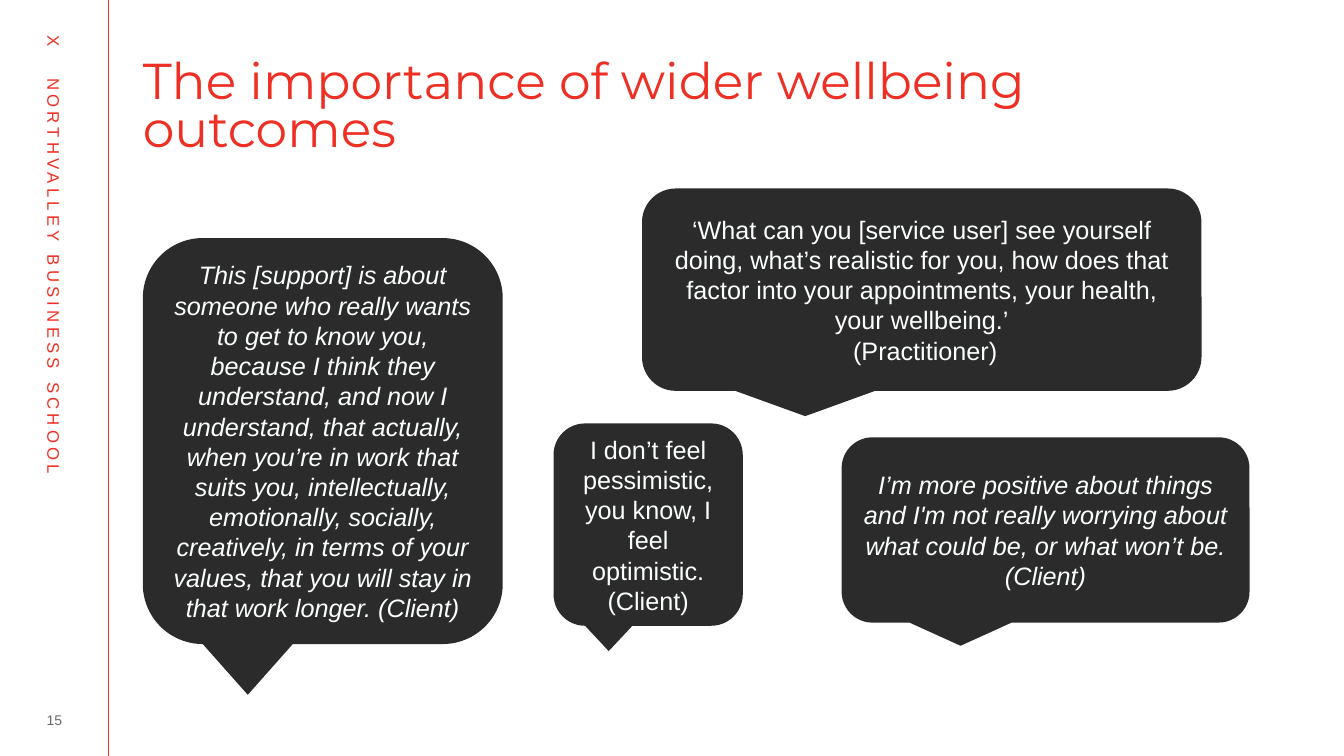
from lxml import etree
from pptx import Presentation
from pptx.dml.color import RGBColor
from pptx.enum.shapes import MSO_CONNECTOR, MSO_SHAPE
from pptx.enum.text import MSO_ANCHOR, PP_ALIGN
from pptx.oxml.ns import qn
from pptx.util import Cm, Pt

TITLE = "The importance of wider wellbeing outcomes"
SIDEBAR = "X\tNORTHVALLEY BUSINESS SCHOOL"
PAGE = "15"

# (left, top, width, height) in cm, italic, paragraphs
QUOTES = [
    ((21.21, 11.02, 10.28, 4.67), True, [
        "I’m more positive about things and I'm not really worrying about "
        "what could be, or what won’t be. (Client)"]),
    ((16.18, 4.75, 14.1, 5.1), False, [
        "‘What can you [service user] see yourself doing, what’s realistic "
        "for you, how does that factor into your appointments, your health, "
        "your wellbeing.’",
        " (Practitioner)"]),
    ((3.6, 6, 9.07, 10.23), True, [
        "This [support] is about someone who really wants to get to know you, "
        "because I think they understand, and now I understand, that actually, "
        "when you’re in work that suits you, intellectually, emotionally, "
        "socially, creatively, in terms of your values, that you will stay in "
        "that work longer. (Client)"]),
    ((13.95, 10.67, 4.77, 5.1), False, [
        "I don’t feel pessimistic, you know, I feel optimistic. (Client)"]),
]

RED, TITLE_RED, DARK, GREY, PALE = "EE3024", "ED2F24", "2B2B2B", "6B6B6B", "FCFFFF"


def paint(color_format, color):
    color_format.rgb = RGBColor.from_string(color)


def style(p, size, color, font="Arial", align=PP_ALIGN.LEFT, italic=False):
    p.alignment = align
    p.font.name, p.font.size, p.font.italic = font, Pt(size), italic
    paint(p.font.color, color)


def add_text(s, box, text, wrap=True, insets=None):
    """Add a text box of one paragraph; return its shape and paragraph."""
    sp = s.shapes.add_textbox(*map(Cm, box))
    tf = sp.text_frame
    tf.word_wrap = wrap
    if insets:
        tf.margin_left, tf.margin_top, tf.margin_right, tf.margin_bottom = map(Cm, insets)
    p = tf.paragraphs[0]
    p.add_run().text = text
    return sp, p


def add_rule(s, x, height):
    line = s.shapes.add_connector(MSO_CONNECTOR.STRAIGHT, x, 0, x, height)
    paint(line.line.color, RED)
    line.line.width = Pt(0.5)
    etree.SubElement(line._element.spPr, qn("a:effectLst"))


def add_sidebar(s):
    """Add the letter-spaced text that runs down the left edge."""
    sp, p = add_text(s, (-5.84, 7.47, 14.4, 0.76), SIDEBAR)
    sp.rotation = 90
    style(p, 12, RED)
    p.runs[0]._r.get_or_add_rPr().set("spc", "300")
    tabs = etree.Element(qn("a:tabLst"))
    etree.SubElement(tabs, qn("a:tab"), pos=str(Cm(1.07)), algn="l")
    p._p.get_or_add_pPr().insert(0, tabs)


def add_quote(s, box, italic, paragraphs):
    sp = s.shapes.add_shape(MSO_SHAPE.ROUNDED_RECTANGULAR_CALLOUT, *map(Cm, box))
    sp.shadow.inherit = False
    sp.fill.solid()
    paint(sp.fill.fore_color, DARK)
    sp.line.fill.background()
    tf = sp.text_frame
    tf.word_wrap = True
    tf.vertical_anchor = MSO_ANCHOR.MIDDLE
    tf.text = "\n".join(paragraphs)
    for p in tf.paragraphs:
        style(p, 18, PALE, align=PP_ALIGN.CENTER, italic=italic)
        if italic:
            p.space_after = Pt(10)


def main():
    prs = Presentation()
    prs.slide_width, prs.slide_height = Cm(33.87), Cm(19.05)
    s = prs.slides.add_slide(prs.slide_layouts[6])

    add_rule(s, Cm(2.74), prs.slide_height)
    add_sidebar(s)

    _, p = add_text(s, (3.6, 1, 28.8, 3.05), TITLE, insets=(0, 0.53, 0, 0))
    style(p, 36, TITLE_RED, "Montserrat")
    p.line_spacing = 0.8

    sp, p = add_text(s, (0.66, 17.83, 1.42, 0.64), PAGE, insets=(0, 0, 0, 0))
    sp.text_frame.vertical_anchor = MSO_ANCHOR.MIDDLE
    style(p, 10, GREY, align=PP_ALIGN.CENTER)

    for quote in QUOTES:
        add_quote(s, *quote)

    prs.save("out.pptx")


if __name__ == "__main__":
    main()
